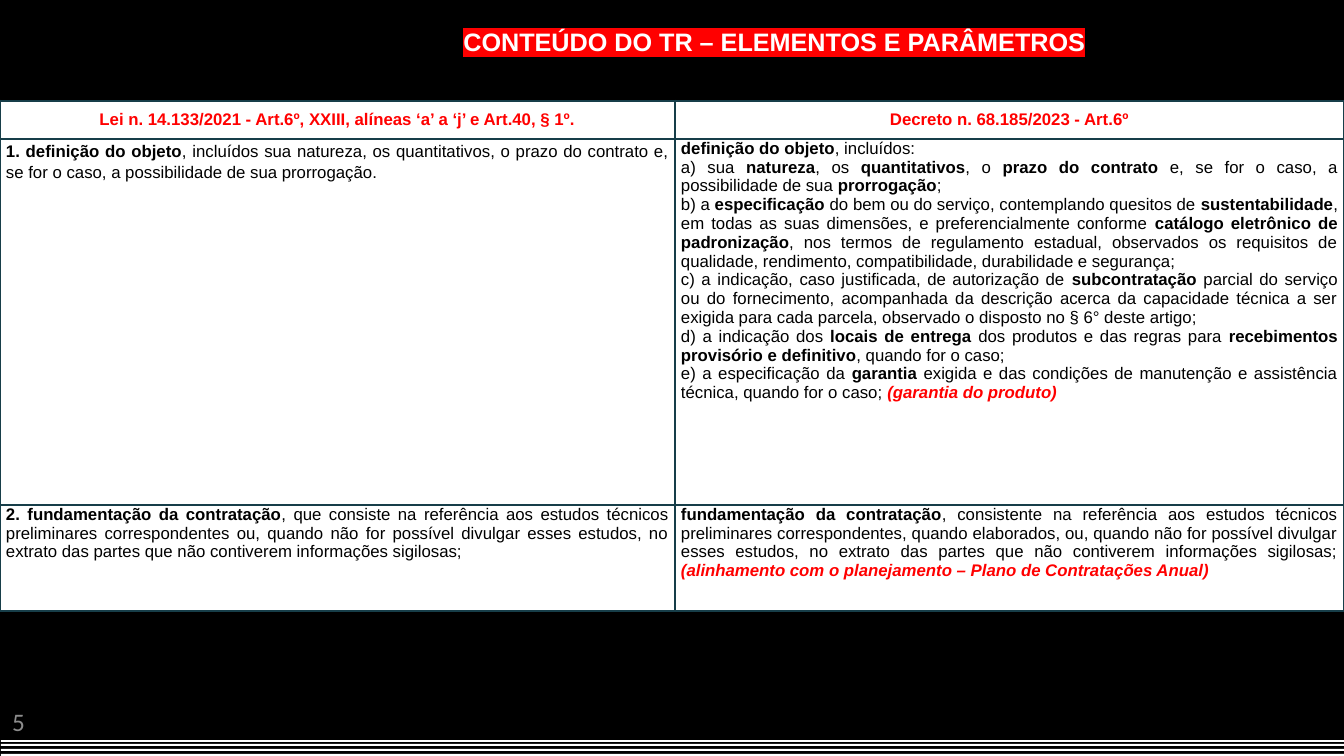
import pptx
import pptx.dml.color
import pptx.enum.text
import pptx.oxml
import pptx.oxml.ns
import pptx.util

RGB = pptx.dml.color.RGBColor
BLACK = RGB(0x00, 0x00, 0x00)
WHITE = RGB(0xFF, 0xFF, 0xFF)
RED = RGB(0xFF, 0x00, 0x00)
GREY = RGB(0x8C, 0x8C, 0x8C)
TEAL = RGB(0x21, 0x59, 0x68)
BORDER = RGB(0x17, 0x3E, 0x49)
ALIGN = pptx.enum.text.PP_ALIGN
NS = pptx.oxml.ns.nsdecls("a")

HEADER = [
    "Lei n. 14.133/2021 - Art.6º, XXIII, alíneas ‘a’ a ‘j’ e Art.40, § 1º.",
    "Decreto n. 68.185/2023 - Art.6º",
]
BODY = [
    [
        ["*1. definição do objeto*, incluídos sua natureza, os quantitativos, o prazo do contrato e, "
         "se for o caso, a possibilidade de sua prorrogação."],
        ["*definição do objeto*, incluídos:",
         "a) sua *natureza*, os *quantitativos*, o *prazo do contrato* e, se for o caso, a "
         "possibilidade de sua *prorrogação*;",
         "b) a *especificação* do bem ou do serviço, contemplando quesitos de *sustentabilidade*, "
         "em todas as suas dimensões, e preferencialmente conforme *catálogo eletrônico de "
         "padronização*, nos termos de regulamento estadual, observados os requisitos de "
         "qualidade, rendimento, compatibilidade, durabilidade e segurança;",
         "c) a indicação, caso justificada, de autorização de *subcontratação* parcial do serviço "
         "ou do fornecimento, acompanhada da descrição acerca da capacidade técnica a ser "
         "exigida para cada parcela, observado o disposto no § 6° deste artigo;",
         "d) a indicação dos *locais de entrega* dos produtos e das regras para *recebimentos "
         "provisório e definitivo*, quando for o caso;",
         "e) a especificação da *garantia* exigida e das condições de manutenção e assistência "
         "técnica, quando for o caso; *(garantia do produto)*"],
    ],
    [
        ["*2. fundamentação da contratação*, que consiste na referência aos estudos técnicos "
         "preliminares correspondentes ou, quando não for possível divulgar esses estudos, no "
         "extrato das partes que não contiverem informações sigilosas;"],
        ["*fundamentação da contratação*, consistente na referência aos estudos técnicos "
         "preliminares correspondentes, quando elaborados, ou, quando não for possível divulgar "
         "esses estudos, no extrato das partes que não contiverem informações sigilosas; "
         "*(alinhamento com o planejamento – Plano de Contratações Anual)*"],
    ],
]


def px(n):
    """Turn pixels into EMU."""
    return pptx.util.Emu(round(n * 12192000 / 1344))


class Deck:
    """Hold the style and the current slide."""

    def __init__(self):
        """Open a presentation with one slide."""
        self.prs = pptx.Presentation()
        self.prs.slide_width, self.prs.slide_height = px(1344), px(756)
        self.s = self.prs.slides.add_slide(self.prs.slide_layouts[6])
        fill = self.s.background.fill
        fill.solid()
        fill.fore_color.rgb = TEAL

    def style(self, p, align, size, color, name="Arial", bold=None):
        """Set the alignment and font of a paragraph."""
        p.alignment = align
        p.font.size = pptx.util.Pt(size)
        p.font.name = name
        p.font.bold = bold
        p.font.color.rgb = color

    def bands(self, left, right, tops, height, color):
        """Draw full-width bands as one outline."""
        fb = self.s.shapes.build_freeform(left, tops[0], scale=px(100) / 100)
        for i, top in enumerate(tops):
            if i:
                fb.move_to(left, top)
            fb.add_line_segments([(right, top), (right, top + height), (left, top + height)])
        sp = fb.convert_to_shape()
        sp.shadow.inherit = False
        sp.fill.solid()
        sp.fill.fore_color.rgb = color
        sp.line.fill.background()

    def text(self, box, text, align, color, name, bold=None, inset=0, indent=0, highlight=None):
        """Add a line of text in a box."""
        tf = self.s.shapes.add_textbox(*map(px, box)).text_frame
        tf.word_wrap = True
        tf.margin_left = tf.margin_right = px(2 * inset)
        tf.margin_top = tf.margin_bottom = px(inset)
        p = tf.paragraphs[0]
        p._p.get_or_add_pPr().set("marL", str(px(indent)))
        self.style(p, align, 18, color, name, bold)
        r = p.add_run()
        r.text = text
        if highlight is not None:
            r._r.get_or_add_rPr().append(pptx.oxml.parse_xml(
                f'<a:highlight {NS}><a:srgbClr val="{highlight}"/></a:highlight>'))

    def cell(self, cell):
        """Give a cell its margins, borders and fill."""
        cell.margin_left = cell.margin_right = px(6)
        cell.margin_top = cell.margin_bottom = 0
        tcPr = cell._tc.get_or_add_tcPr()
        for side in "LRTB":
            tcPr.append(pptx.oxml.parse_xml(
                f'<a:ln{side} {NS} w="{pptx.util.Pt(2.25)}"><a:solidFill>'
                f'<a:srgbClr val="{BORDER}"/></a:solidFill></a:ln{side}>'))
        cell.fill.solid()
        cell.fill.fore_color.rgb = WHITE

    def rich(self, p, text):
        """Fill a paragraph, with starred parts bold and bracketed ones red."""
        self.style(p, ALIGN.JUSTIFY, 12, BLACK)
        for i, part in enumerate(text.split("*")):
            if not part:
                continue
            r = p.add_run()
            r.text = part
            if i % 2:
                r.font.bold = True
                if part.startswith("("):
                    r.font.italic = True
                    r.font.color.rgb = RED

    def table(self, left, top, widths, heights):
        """Add the comparison table."""
        frame = self.s.shapes.add_table(len(heights), len(widths), px(left), px(top),
                                        px(sum(widths)), px(sum(heights)))
        table = frame.table
        table.first_row = table.horz_banding = False
        for col, width in zip(table.columns, widths):
            col.width = px(width)
        for row, height in zip(table.rows, heights):
            row.height = px(height)
        for cell in table.iter_cells():
            self.cell(cell)
        for c, title in enumerate(HEADER):
            p = table.cell(0, c).text_frame.paragraphs[0]
            p.line_spacing = 1.5
            p.space_after = pptx.util.Pt(10)
            self.style(p, ALIGN.CENTER, 12, RED, bold=True)
            p.add_run().text = title
        for r, row in enumerate(BODY, 1):
            for c, lines in enumerate(row):
                tf = table.cell(r, c).text_frame
                for i, line in enumerate(lines):
                    self.rich(tf.add_paragraph() if i else tf.paragraphs[0], line)
        p = table.cell(1, 0).text_frame.paragraphs[0]
        p.line_spacing = 1.15
        p.space_after = pptx.util.Pt(10)


def main():
    """Build the slide and save it."""
    deck = Deck()
    deck.bands(0, 1344, [0], 756, BLACK)
    deck.bands(1, 1344, [740 + 14 * i // 3 for i in range(4)], 2, WHITE)
    deck.text((0, 706, 25, 35), "5", ALIGN.RIGHT, GREY, "Calibri")
    deck.table(0, 101, [675, 669], [38, 366, 106])
    deck.text((330, 21, 809, 40), "CONTEÚDO DO TR – ELEMENTOS E PARÂMETROS", ALIGN.CENTER,
              WHITE, "Arial", bold=True, inset=5, indent=80, highlight=RED)
    deck.prs.save("out.pptx")


if __name__ == "__main__":
    main()
